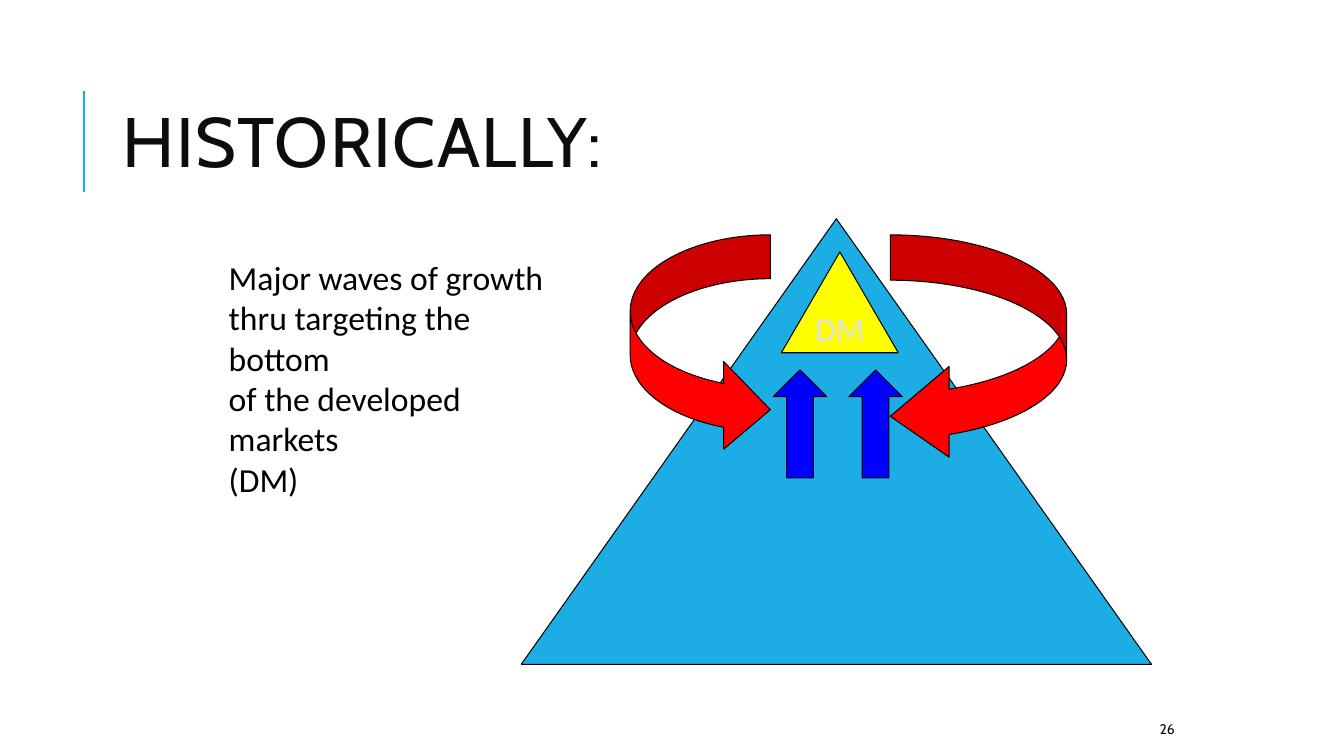
from pptx import Presentation, util as u
from pptx.dml import color
from pptx.enum import shapes, text
from pptx.oxml import xmlchemy as xc


def rgb(value):
    """Return the colour of a hex string."""
    return color.RGBColor.from_string(value)


class Deck:
    """Hold the style and the current slide."""

    ACCENT, BLACK, INK = "1CADE4", "000000", "0D0D0D"
    HEAD_FONT, BODY_FONT = "Cabin", "Calibri"

    def __init__(self):
        """Start a wide presentation with one blank slide."""
        self.prs = Presentation()
        self.prs.slide_width = u.Inches(13.33)
        self.prs.slide_height = u.Inches(7.5)
        self.s = self.prs.slides.add_slide(self.prs.slide_layouts[6])

    def add_text(self, tf, lines, size, font, fill, align="LEFT", anchor="TOP",
                 wrap=True, leading=None, spacing=None):
        """Fill a text frame with one paragraph per line."""
        tf.word_wrap = wrap
        tf.vertical_anchor = getattr(text.MSO_ANCHOR, anchor)
        for i, line in enumerate(lines):
            p = tf.add_paragraph() if i else tf.paragraphs[0]
            p.alignment = getattr(text.PP_ALIGN, align)
            if leading:
                p.line_spacing = leading
            r = p.add_run()
            r.text = line
            r.font.size = u.Pt(size)
            r.font.name = font
            r.font.color.rgb = rgb(fill)
            if spacing:
                r.font._element.set("spc", str(spacing))

    def textbox(self, box, lines, size, font, fill, **style):
        """Add a text box."""
        sp = self.s.shapes.add_textbox(*map(u.Inches, box))
        self.add_text(sp.text_frame, lines, size, font, fill, **style)

    def shape(self, kind, box, fill, adjust=()):
        """Add an outlined preset shape."""
        sp = self.s.shapes.add_shape(kind, *map(u.Inches, box))
        sp.shadow.inherit = False
        sp.fill.solid()
        sp.fill.fore_color.rgb = rgb(fill)
        sp.line.color.rgb = rgb(self.BLACK)
        sp.line.width = u.Pt(0.75)
        for i, value in enumerate(adjust):
            sp.adjustments[i] = value
        return sp

    def line(self, ends, fill, width):
        """Add a straight line."""
        c = self.s.shapes.add_connector(shapes.MSO_CONNECTOR.STRAIGHT, *map(u.Inches, ends))
        c.line.color.rgb = rgb(fill)
        c.line.width = u.Pt(width)
        c._element.spPr.append(xc.OxmlElement("a:effectLst"))


def main():
    """Build the slide and save it."""
    d = Deck()
    kinds = shapes.MSO_SHAPE
    d.line((0.83, 1.9, 0.83, 0.9), d.ACCENT, 1.5)
    d.textbox((5.3, 7.08, 6.45, 0.3), ["26"], 10, d.HEAD_FONT, d.INK,
              align="RIGHT", anchor="MIDDLE")
    d.textbox((1.12, 0.64, 10.63, 1.64), ["HISTORICALLY:"], 50, d.HEAD_FONT, d.INK,
              anchor="MIDDLE", leading=0.8, spacing=100)

    d.shape(kinds.ISOSCELES_TRIANGLE, (5.17, 2.17, 6.25, 4.42), d.ACCENT)
    d.shape(kinds.CURVED_RIGHT_ARROW, (6.25, 2.33, 1.39, 2.17), "FF0000", (0.313, 0.626, 0.333))
    d.shape(kinds.CURVED_LEFT_ARROW, (8.83, 2.33, 1.75, 2.25), "FF0000", (0.257, 0.514, 0.333))
    for left in (7.67, 8.42):
        d.shape(kinds.UP_ARROW, (left, 3.67, 0.53, 1.07), "0000FF")

    d.textbox((2.17, 2.5, 3.66, 2.1),
              ["Major waves of growth", "thru targeting the bottom",
               "of the developed markets", "(DM)"],
              24, d.BODY_FONT, d.BLACK)
    market = d.shape(kinds.ISOSCELES_TRIANGLE, (7.75, 2.5, 1.16, 1), "FFFF00")
    d.add_text(market.text_frame, ["DM"], 24, d.BODY_FONT, "DFE3E5",
               align="CENTER", anchor="MIDDLE", wrap=False)
    d.prs.save("out.pptx")


if __name__ == "__main__":
    main()
